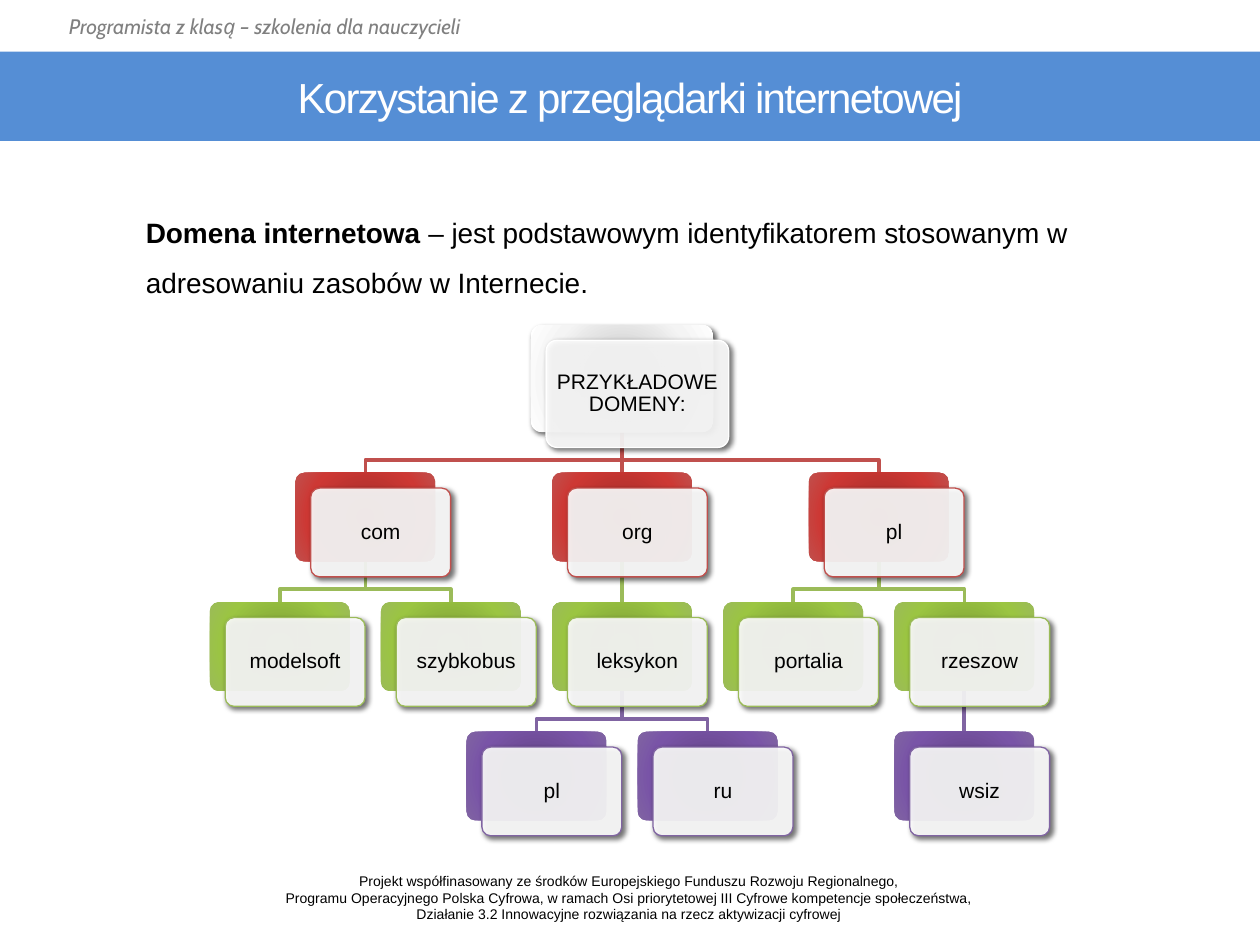
from dataclasses import dataclass

from lxml.etree import SubElement
from pptx import Presentation
from pptx.dml.color import RGBColor
from pptx.enum.shapes import MSO_CONNECTOR, MSO_SHAPE
from pptx.enum.text import MSO_ANCHOR, MSO_AUTO_SIZE, PP_ALIGN
from pptx.oxml.ns import qn
from pptx.util import Cm, Pt

CENTER, COLUMN_STEP = 12.54, 3.45
ROOT_TOP, ROW_GAP = 6.55, 0.82
ROOT_WIDTH, ROOT_HEIGHT = 3.68, 2.16
CARD_WIDTH, CARD_HEIGHT = 2.82, 1.79
FRONT_SHIFT, ELBOW_DROP = 0.31, 0.56
LABEL_MARGIN = 0.08


@dataclass(frozen=True)
class Level:
    line: str
    shades: tuple[str, ...]


@dataclass(frozen=True)
class Domain:
    key: str
    label: str
    depth: int
    column: float
    parent: str = ""

    @property
    def width(self) -> float:
        return CARD_WIDTH if self.depth else ROOT_WIDTH

    @property
    def height(self) -> float:
        return CARD_HEIGHT if self.depth else ROOT_HEIGHT

    @property
    def middle(self) -> float:
        return CENTER + self.column * COLUMN_STEP

    @property
    def top(self) -> float:
        if not self.depth:
            return ROOT_TOP
        first_row = ROOT_TOP + ROOT_HEIGHT + ROW_GAP
        return first_row + (self.depth - 1) * (CARD_HEIGHT + ROW_GAP)

    @property
    def bottom(self) -> float:
        return self.top + self.height


LEVELS = (
    Level("FFFFFF", ("DADADA", "DADADA", "F4F4F4", "FFFFFF")),
    Level("C0504D", ("BD2D29", "B8322E", "CD3834", "C0504D")),
    Level("9BBB59", ("8CB537", "8BB13B", "9BC542", "9BBB59")),
    Level("8064A2", ("6C4898", "6D4B95", "7954A7", "8064A2")),
)
DOMAINS = (
    Domain("root", "PRZYKŁADOWE\nDOMENY:", 0, 0),
    Domain("com", "com", 1, -1.5, "root"),
    Domain("software", "modelsoft", 2, -2, "com"),
    Domain("coach", "szybkobus", 2, -1, "com"),
    Domain("org", "org", 1, 0, "root"),
    Domain("lexicon", "leksykon", 2, 0, "org"),
    Domain("lexicon_pl", "pl", 3, -0.5, "lexicon"),
    Domain("lexicon_ru", "ru", 3, 0.5, "lexicon"),
    Domain("pl", "pl", 1, 1.5, "root"),
    Domain("portal", "portalia", 2, 1, "pl"),
    Domain("rzeszow", "rzeszow", 2, 2, "pl"),
    Domain("wsiz", "wsiz", 3, 2, "rzeszow"),
)
FOOTER = (
    "Projekt współfinasowany ze środków Europejskiego Funduszu Rozwoju Regionalnego,",
    "Programu Operacyjnego Polska Cyfrowa, w ramach Osi priorytetowej III Cyfrowe kompetencje społeczeństwa,",
    "Działanie 3.2 Innowacyjne rozwiązania na rzecz aktywizacji cyfrowej",
)


def color(value: str) -> RGBColor:
    return RGBColor.from_string(value)


def add_run(paragraph, text: str, size: float, ink: str = "000000",
            face: str = "Arial", bold: bool = False, italic: bool = False):
    run = paragraph.add_run()
    run.text = text
    run.font.size, run.font.name = Pt(size), face
    run.font.bold, run.font.italic = bold, italic
    run.font.color.rgb = color(ink)
    return run


def add_text_frame(slide, left: float, top: float, width: float, height: float):
    frame = slide.shapes.add_textbox(Cm(left), Cm(top), Cm(width), Cm(height)).text_frame
    frame.word_wrap = True
    return frame


def add_shadow(shape) -> None:
    effects = shape._element.spPr.find(qn("a:effectLst"))
    shadow = SubElement(effects, qn("a:outerShdw"), blurRad=str(Pt(3)), dist=str(Pt(2)),
                        dir="2700000", algn="tl", rotWithShape="0")
    ink = SubElement(shadow, qn("a:srgbClr"), val="000000")
    SubElement(ink, qn("a:alpha"), val="60000")


def add_radial_fill(shape, shades: tuple[str, ...]) -> None:
    gradient = SubElement(shape._element.spPr, qn("a:gradFill"), rotWithShape="1")
    stops = SubElement(gradient, qn("a:gsLst"))
    for place, shade in zip((0, 34, 70, 100), shades):
        stop = SubElement(stops, qn("a:gs"), pos=str(place * 1000))
        SubElement(stop, qn("a:srgbClr"), val=shade)
    radial = SubElement(gradient, qn("a:path"), path="circle")
    SubElement(radial, qn("a:fillToRect"), l="100000", t="100000", r="100000", b="100000")


def add_panel(slide, domain: Domain, shift: float):
    panel = slide.shapes.add_shape(
        MSO_SHAPE.ROUNDED_RECTANGLE,
        Cm(domain.middle - domain.width / 2 + shift), Cm(domain.top + shift),
        Cm(domain.width), Cm(domain.height))
    panel.adjustments[0] = 0.1
    return panel


def add_card(slide, domain: Domain):
    level = LEVELS[domain.depth]
    back = add_panel(slide, domain, 0)
    add_radial_fill(back, level.shades)
    back.line.fill.background()
    back.shadow.inherit = False
    if not domain.depth:
        add_shadow(back)

    front = add_panel(slide, domain, FRONT_SHIFT)
    front.fill.solid()
    front.fill.fore_color.rgb = color("FFFFFF")
    white = front._element.spPr.find(qn("a:solidFill")).find(qn("a:srgbClr"))
    SubElement(white, qn("a:alpha"), val="90000")
    front.line.color.rgb = color(level.line)
    front.line.width = Pt(0.75)
    front.shadow.inherit = False
    add_shadow(front)

    frame = front.text_frame
    frame.word_wrap = True
    frame.vertical_anchor = MSO_ANCHOR.MIDDLE
    frame.margin_left = frame.margin_right = Cm(LABEL_MARGIN)
    frame.margin_top = frame.margin_bottom = Cm(LABEL_MARGIN)
    label = frame.paragraphs[0]
    label.alignment = PP_ALIGN.CENTER
    label.line_spacing = 0.9
    for index, words in enumerate(domain.label.split("\n")):
        if index:
            label.add_line_break()
        add_run(label, words, 12)
    return back


def add_branch(slide, parent: Domain, child: Domain):
    start = (Cm(parent.middle), Cm(parent.bottom))
    end = (Cm(child.middle), Cm(child.top))
    if parent.column == child.column:
        branch = slide.shapes.add_connector(MSO_CONNECTOR.STRAIGHT, *start, *end)
        SubElement(branch._element.spPr, qn("a:effectLst"))
    else:
        bend = Cm(parent.bottom + ELBOW_DROP)
        outline = slide.shapes.build_freeform(*start)
        outline.add_line_segments([(start[0], bend), (end[0], bend), end], close=False)
        branch = outline.convert_to_shape()
        branch.fill.background()
        branch.shadow.inherit = False
    branch.line.color.rgb = color(LEVELS[child.depth].line)
    branch.line.width = Pt(2.08)
    return branch


def add_tree(slide) -> None:
    by_key = {domain.key: domain for domain in DOMAINS}
    branches = {child.key: add_branch(slide, by_key[child.parent], child)
                for child in DOMAINS if child.parent}
    cards = {domain.key: add_card(slide, domain) for domain in DOMAINS}
    for child in DOMAINS:
        if child.parent and by_key[child.parent].column == child.column:
            branches[child.key].begin_connect(cards[child.parent], 2)
            branches[child.key].end_connect(cards[child.key], 0)


def format_title(title) -> None:
    title.left, title.top, title.width, title.height = Cm(0), Cm(1.04), Cm(25.4), Cm(1.8)
    title.fill.solid()
    title.fill.fore_color.rgb = color("558ED5")
    frame = title.text_frame
    frame.auto_size = MSO_AUTO_SIZE.NONE
    frame.vertical_anchor = MSO_ANCHOR.MIDDLE
    heading = frame.paragraphs[0]
    heading.alignment = PP_ALIGN.CENTER
    run = add_run(heading, "Korzystanie z przeglądarki internetowej", 24, "FFFFFF")
    run.font._element.set("spc", "-100")


def main() -> None:
    deck = Presentation()
    deck.slide_width, deck.slide_height = Cm(25.4), Cm(19.05)
    slide = deck.slides.add_slide(deck.slide_layouts[5])
    format_title(slide.shapes.title)

    course = add_text_frame(slide, 1.14, 0.15, 13.94, 0.76).paragraphs[0]
    add_run(course, "Programista z klasą – szkolenia dla nauczycieli", 12, "808080", "Cabin", italic=True)

    funding = add_text_frame(slide, 0.3, 17.46, 24.77, 1.27)
    for index, sentence in enumerate(FOOTER):
        line = funding.add_paragraph() if index else funding.paragraphs[0]
        line.alignment = PP_ALIGN.CENTER
        add_run(line, sentence, 8)

    add_tree(slide)

    definition = add_text_frame(slide, 2.69, 3.88, 19.99, 2.18).paragraphs[0]
    definition.line_spacing = 1.5
    add_run(definition, "Domena internetowa ", 16, bold=True)
    add_run(definition, "– jest podstawowym identyfikatorem stosowanym w adresowaniu zasobów w Internecie.", 16)
    deck.save("out.pptx")


if __name__ == "__main__":
    main()
